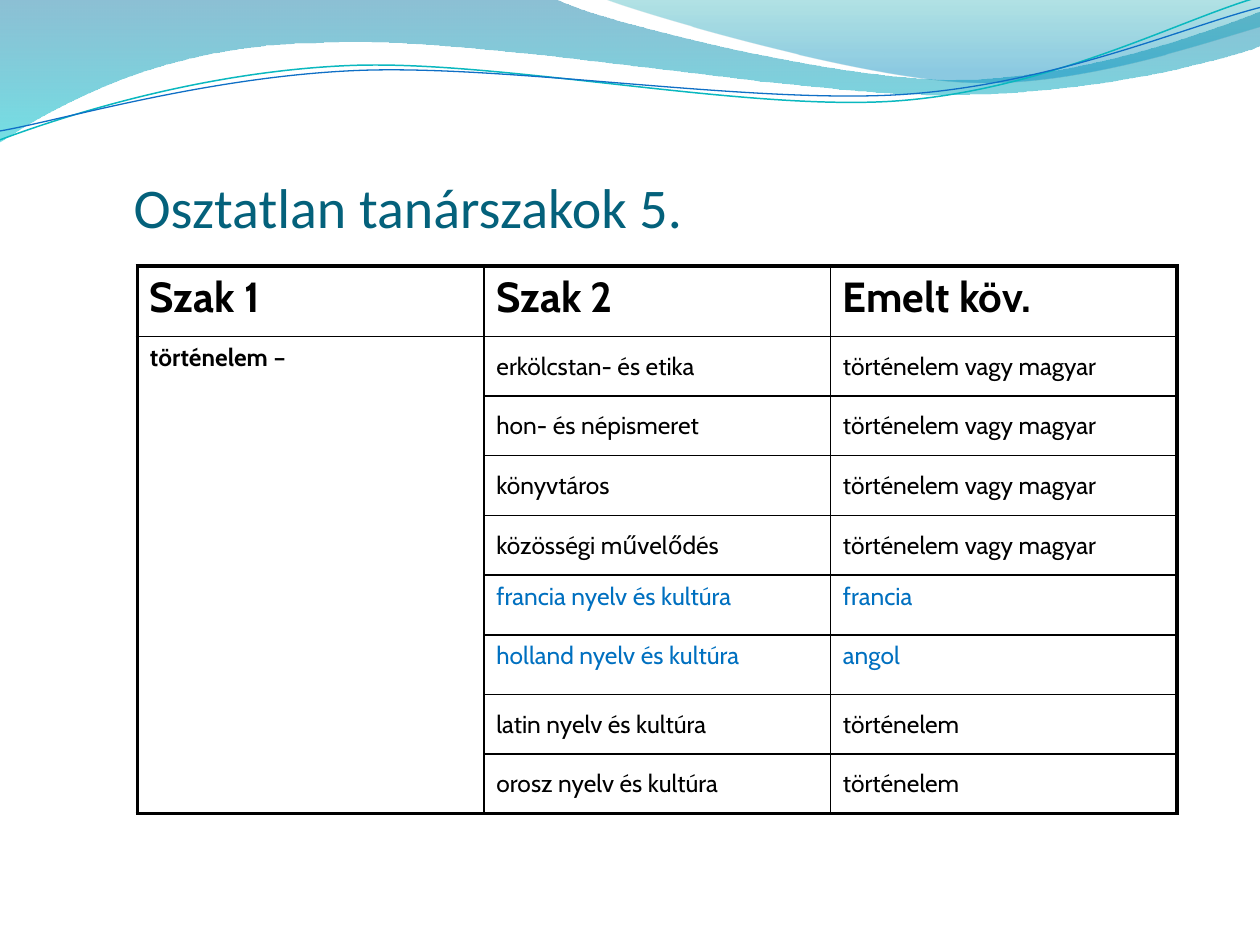
from math import cos, radians, sin

from lxml import etree
from pptx import Presentation
from pptx.dml.color import RGBColor
from pptx.enum.text import MSO_ANCHOR, MSO_AUTO_SIZE, PP_ALIGN
from pptx.oxml.ns import qn
from pptx.util import Inches, Pt

LEFT, TOP = PP_ALIGN.LEFT, MSO_ANCHOR.TOP
MIDDLE, BOTTOM = MSO_ANCHOR.MIDDLE, MSO_ANCHOR.BOTTOM
NO_FIT = MSO_AUTO_SIZE.NONE
WIDE, HIGH = 10, 7.5
BLACK, BLUE, TEAL = "000000", "0070C0", "04617B"
TILT = 2.7

# Each wave is a start point and its segments: 2 numbers a line, 6 a curve
BANDS = [
    ((0, -0.01), [
        (4.4, -0.01), (4.76, 0.17, 6.64, 0.63, 7.58, 0.63),
        (8.53, 0.63, 9.58, 0.26, 10, 0.09), (10.01, 0.36),
        (9.83, 0.44, 8.7, 0.76, 7.46, 0.75),
        (6.22, 0.75, 3.82, 0.28, 2.57, 0.34),
        (1.29, 0.35, 0.46, 0.83, -0.01, 1.13)],
     [(0, "0074A1", 45), (1, "00C6CF", 55)]),
    ((4.79, -0.01), [
        (5.09, 0.11, 6.82, 0.62, 7.69, 0.65),
        (8.56, 0.69, 9.61, 0.32, 10, 0.21), (10, 0)],
     [(0, "00A1A9", 30), (0.8, "008BBF", 45)]),
]
LINES = [
    ((0, 1.11), [
        (0.48, 0.93, 1.58, 0.57, 2.77, 0.52),
        (3.95, 0.47, 5.93, 0.89, 7.13, 0.8),
        (8.33, 0.71, 9.38, 0.15, 9.98, -0.02)], (4.99, 0.58), "0AB8BF", 0.85),
    ((0, 1.04), [
        (0.47, 0.96, 1.64, 0.61, 2.83, 0.56),
        (4.03, 0.51, 5.97, 0.83, 7.17, 0.75),
        (8.36, 0.67, 9.41, 0.21, 10, 0.06)], (5, 0.59), "0F6FC6", 0.75),
]

HEAD = ["Szak 1", "Szak 2", "Emelt köv."]
MAJOR = "történelem –"
ROWS = [  # second subject, requirement, colour, anchor
    ("erkölcstan- és etika", "történelem vagy magyar", BLACK, MIDDLE),
    ("hon- és népismeret", "történelem vagy magyar", BLACK, MIDDLE),
    ("könyvtáros", "történelem vagy magyar", BLACK, MIDDLE),
    ("közösségi művelődés", "történelem vagy magyar", BLACK, MIDDLE),
    ("francia nyelv és kultúra", "francia", BLUE, TOP),
    ("holland nyelv és kultúra", "angol", BLUE, TOP),
    ("latin nyelv és kultúra", "történelem", BLACK, MIDDLE),
    ("orosz nyelv és kultúra", "történelem", BLACK, MIDDLE),
]


def tint(code):
    return RGBColor.from_string(code)


def turn(pts, mid, angle):
    c, s = cos(radians(angle)), sin(radians(angle))
    return [(mid[0] + (x - mid[0]) * c - (y - mid[1]) * s,
             mid[1] + (x - mid[0]) * s + (y - mid[1]) * c) for x, y in pts]


def flat(start, segs):
    """List every corner and control point in order."""
    return [start] + [seg[i:i + 2] for seg in segs for i in range(0, len(seg), 2)]


def outline(slide, pts, segs, close):
    pts = [(Inches(x), Inches(y)) for x, y in pts]
    pen = slide.shapes.build_freeform(*pts[0])
    pen.add_line_segments(pts[1:], close=close)
    shape = pen.convert_to_shape()
    shape.shadow.inherit = False
    # Join each three points of a curve into one bezier
    nodes = iter(list(shape._element.iter(qn("a:lnTo"))))
    for seg in segs:
        trio = [next(nodes) for _ in range(len(seg) // 2)]
        if len(trio) == 3:
            curve = etree.Element(qn("a:cubicBezTo"))
            trio[0].addprevious(curve)
            for node in trio:
                curve.append(node[0])
                node.getparent().remove(node)
    return shape


def add_waves(slide, x, y):
    def shift(pts):
        return [(x + px, y + py) for px, py in pts]

    # Shaded bands
    for start, segs, stops in BANDS:
        band = outline(slide, shift(flat(start, segs)), segs, True)
        band.line.fill.background()
        band.fill.gradient()
        band.fill.gradient_angle = 270
        for stop, (place, code, _) in zip(band.fill.gradient_stops, stops):
            stop.position = place
            stop.color.rgb = tint(code)
        for node, (_, _, alpha) in zip(band._element.iter(qn("a:srgbClr")), stops):
            etree.SubElement(node, qn("a:alpha"), val=str(alpha * 1000))

    # Thin tilted lines
    for start, segs, mid, code, width in LINES:
        pts = turn(flat(start, segs), mid, TILT)
        line = outline(slide, shift(pts), segs, False)
        line.rotation = -TILT
        line.fill.background()
        line.line.color.rgb = tint(code)
        line.line.width = Pt(width)


def add_title(slide, x, y, w, h):
    title = slide.shapes.title
    title.left, title.top, title.width, title.height = map(Inches, (x, y, w, h))
    frame = title.text_frame
    frame.text = "Osztatlan tanárszakok 5."
    frame.word_wrap, frame.auto_size = True, NO_FIT
    frame.vertical_anchor = BOTTOM
    frame.margin_left = frame.margin_right = frame.margin_bottom = 0
    frame.margin_top = Inches(0.05)
    para = frame.paragraphs[0]
    para.alignment = LEFT
    style(para.font, 32, TEAL, "Calibri")
    slide.shapes._spTree.append(title._element)


def style(font, size, code, name="Cabin", bold=False):
    font.size, font.name, font.bold = Pt(size), name, bold
    font.color.rgb = tint(code)


def edge(cell, side, width):
    line = etree.SubElement(cell._tc.get_or_add_tcPr(), qn("a:ln" + side),
                            w=str(Pt(width)))
    fill = etree.SubElement(line, qn("a:solidFill"))
    etree.SubElement(fill, qn("a:srgbClr"), val=BLACK)


def write(cell, text, size, code=BLACK, anchor=TOP, bold=False):
    cell.text = text
    cell.vertical_anchor = anchor
    style(cell.text_frame.paragraphs[0].font, size, code, bold=bold)


def add_grid(slide, x, y, w, h):
    rows, cols = len(ROWS) + 1, len(HEAD)
    table = slide.shapes.add_table(rows, cols, *map(Inches, (x, y, w, h))).table
    table.first_row = table.horz_banding = False
    top = 0.56
    for r, row in enumerate(table.rows):
        row.height = Inches((h - top) / len(ROWS) if r else top)
        # Thick frame, thin inner rules; the merged cell reaches the bottom
        for c, cell in enumerate(row.cells):
            outer = {"L": c == 0, "R": c == cols - 1, "T": r == 0,
                     "B": r == rows - 1 or (r > 0 and c == 0)}
            for side, thick in outer.items():
                edge(cell, side, 2.25 if thick else 1)
            cell.fill.background()

    for c, text in enumerate(HEAD):
        write(table.cell(0, c), text, 24, bold=True)
    table.cell(1, 0).merge(table.cell(rows - 1, 0))
    write(table.cell(1, 0), MAJOR, 14, bold=True)
    for r, (*texts, code, anchor) in enumerate(ROWS, 1):
        for c, text in enumerate(texts, 1):
            write(table.cell(r, c), text, 14, code, anchor)


def main():
    deck = Presentation()
    deck.slide_width, deck.slide_height = Inches(WIDE), Inches(HIGH)
    slide = deck.slides.add_slide(deck.slide_layouts[5])
    add_waves(slide, 0, 0)
    add_title(slide, 1.06, 1.07, 8.25, 0.83)
    add_grid(slide, 1.09, 2.11, 8.25, 4.35)
    deck.save("out.pptx")


if __name__ == "__main__":
    main()
